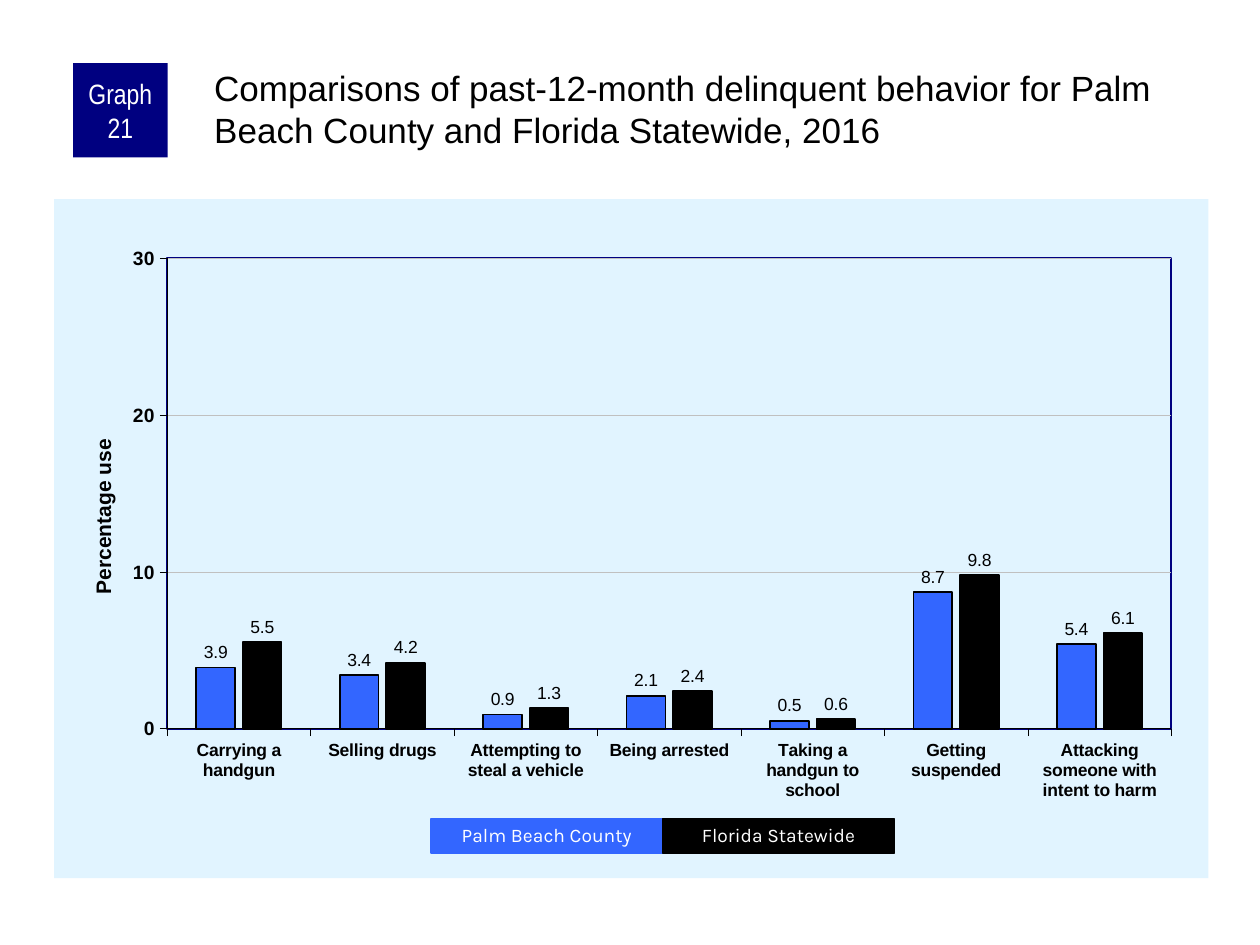
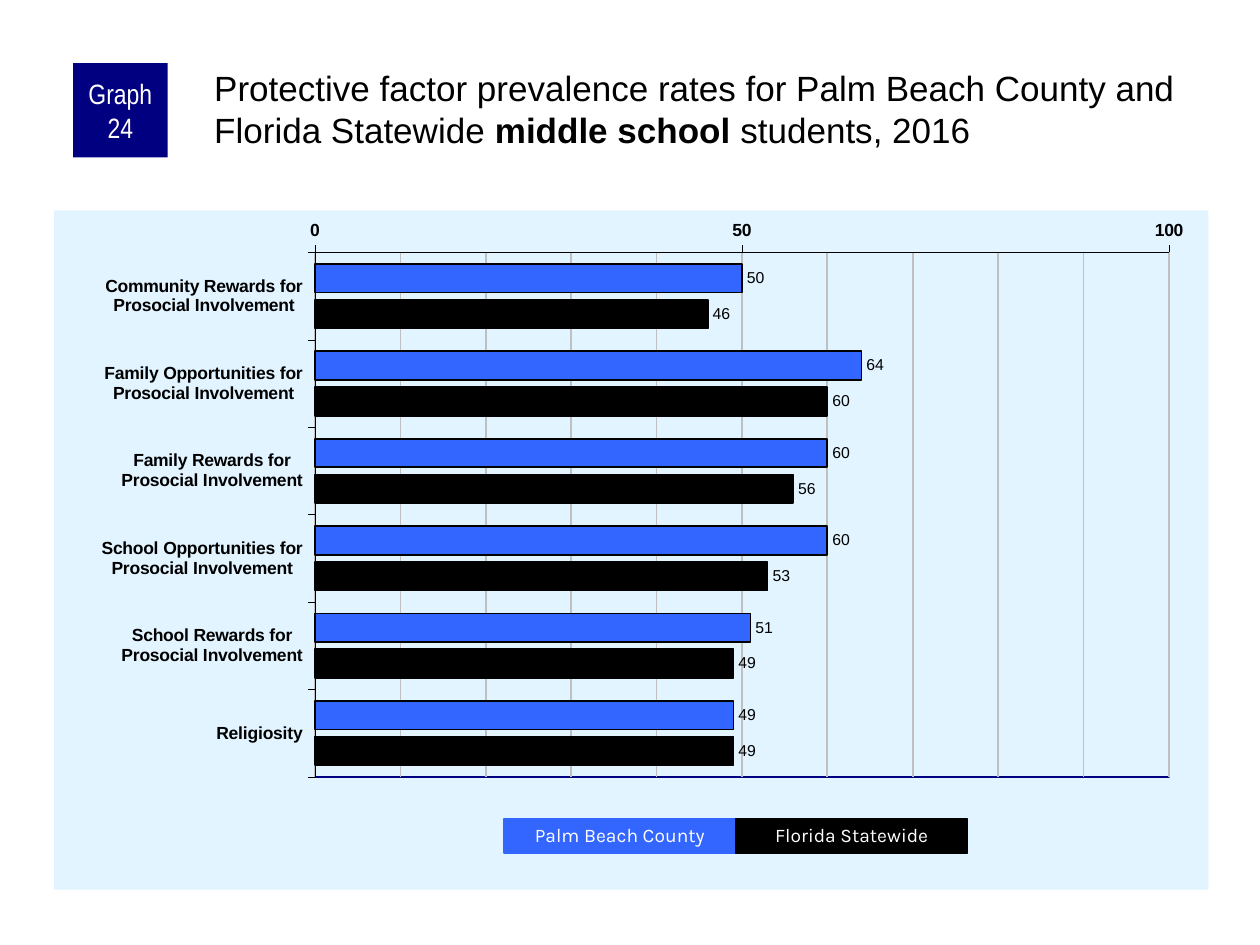
from dataclasses import dataclass

from pptx import Presentation
from pptx.chart.data import CategoryChartData
from pptx.dml.color import RGBColor
from pptx.enum.chart import XL_AXIS_CROSSES, XL_CHART_TYPE, XL_LABEL_POSITION, XL_TICK_MARK
from pptx.enum.shapes import MSO_SHAPE
from pptx.enum.text import MSO_ANCHOR, MSO_AUTO_SIZE, PP_ALIGN
from pptx.oxml import parse_xml
from pptx.oxml.ns import nsdecls, qn
from pptx.util import Inches, Pt

COLUMNS, BARS = XL_CHART_TYPE.COLUMN_CLUSTERED, XL_CHART_TYPE.BAR_CLUSTERED
OUTSIDE, NO_TICK = XL_TICK_MARK.OUTSIDE, XL_TICK_MARK.NONE
OUTSIDE_END = XL_LABEL_POSITION.OUTSIDE_END
MAXIMUM = XL_AXIS_CROSSES.MAXIMUM
RECTANGLE = MSO_SHAPE.RECTANGLE
LEFT, CENTER = PP_ALIGN.LEFT, PP_ALIGN.CENTER
TOP, MIDDLE = MSO_ANCHOR.TOP, MSO_ANCHOR.MIDDLE
NO_AUTOSIZE = MSO_AUTO_SIZE.NONE
TITLE_ONLY = 5


@dataclass(frozen=True)
class Theme:
    navy: str = "000080"
    blue: str = "3366FF"
    black: str = "000000"
    white: str = "FFFFFF"
    pale: str = "E1F4FF"
    grid: str = "C0C0C0"
    body_font: str = "Arial"
    badge_font: str = "Arial Narrow"
    legend_font: str = "Karla"
    title_size: float = 20
    badge_size: float = 16
    axis_title_size: float = 12
    legend_size: float = 11
    category_size: float = 10


THEME = Theme()
REGIONS = [("Palm Beach County", THEME.blue), ("Florida Statewide", THEME.black)]
LEGEND_WIDTH = 1.84

GRAPHS = [
    {
        "badge": "Graph 21",
        "title": [("Comparisons of past-12-month delinquent behavior for Palm "
                   "Beach County and Florida Statewide, 2016", False)],
        "kind": COLUMNS, "top": 1.58, "plot": (0.098, 0.087, 0.87, 0.693),
        "gap": 150, "overlap": -20, "maximum": 30, "major": 10, "grid_width": 0.25,
        "value_size": 11, "label_size": 10, "label_format": "0.0", "legend_left": 3.42,
        "categories": ["Carrying a handgun", "Selling drugs", "Attempting to steal a vehicle",
                       "Being arrested", "Taking a handgun to school", "Getting suspended",
                       "Attacking someone with intent to harm"],
        "values": [(3.9, 3.4, 0.9, 2.1, 0.5, 8.7, 5.4), (5.5, 4.2, 1.3, 2.4, 0.6, 9.8, 6.1)],
    },
    {
        "badge": "Graph 24",
        "title": [("Protective factor prevalence rates for Palm Beach County and "
                   "Florida Statewide ", False),
                  ("middle school ", True), ("students, 2016", False)],
        "kind": BARS, "top": 1.67, "plot": (0.226, 0.062, 0.74, 0.772),
        "gap": 80, "overlap": -25, "maximum": 100, "major": 50, "grid_width": 1,
        "value_size": 10, "label_size": 9, "label_format": "0", "legend_left": 4,
        "categories": [f"{factor} for\nProsocial Involvement" for factor in (
            "Community Rewards", "Family Opportunities", "Family Rewards",
            "School Opportunities", "School Rewards")] + ["Religiosity"],
        "values": [(50, 64, 60, 60, 51, 49), (46, 60, 56, 53, 49, 49)],
    },
]


def add_block(slide, area, text, fill, font_name, size):
    """Add a filled rectangle with centred white text."""
    block = slide.shapes.add_shape(RECTANGLE, *map(Inches, area))
    block.shadow.inherit = False
    block.fill.solid()
    block.fill.fore_color.rgb = RGBColor.from_string(fill)
    block.line.fill.background()
    frame = block.text_frame
    frame.word_wrap = True
    frame.vertical_anchor = MIDDLE
    para = frame.paragraphs[0]
    para.text = text
    para.alignment = CENTER
    para.font.name, para.font.size = font_name, Pt(size)
    para.font.color.rgb = RGBColor.from_string(THEME.white)
    return block


def set_layout(parent, index, modes, **position):
    """Give a chart part a manual layout, as fractions of the chart."""
    for old in parent.findall(qn("c:layout")):
        parent.remove(old)
    settings = {**modes, "xMode": "edge", "yMode": "edge", **position}
    items = "".join(f'<c:{name} val="{value}"/>' for name, value in settings.items())
    parent.insert(index, parse_xml(
        f'<c:layout {nsdecls("c")}><c:manualLayout>{items}</c:manualLayout></c:layout>'))


deck = Presentation()
deck.slide_width, deck.slide_height = Inches(10), Inches(7.5)

for graph in GRAPHS:
    slide = deck.slides.add_slide(deck.slide_layouts[TITLE_ONLY])

    # Title and badge
    title = slide.shapes.title
    title.left, title.top, title.width, title.height = map(Inches, (1.67, 0.5, 7.92, 0.83))
    frame = title.text_frame
    frame.auto_size = NO_AUTOSIZE
    frame.word_wrap = True
    frame.vertical_anchor = TOP
    frame.margin_left = frame.margin_top = Inches(0.03)
    frame.margin_right = frame.margin_bottom = 0
    para = frame.paragraphs[0]
    para.alignment = LEFT
    para.font.name, para.font.size = THEME.body_font, Pt(THEME.title_size)
    para.font.color.rgb = RGBColor.from_string(THEME.black)
    for text, bold in graph["title"]:
        span = para.add_run()
        span.text = text
        span.font.bold = bold

    badge = add_block(slide, (0.58, 0.5, 0.75, 0.75), graph["badge"], THEME.navy,
                      THEME.badge_font, THEME.badge_size)
    frame = badge.text_frame
    frame.margin_left = frame.margin_right = Inches(0.05)
    frame.margin_top = frame.margin_bottom = 0

    # Chart
    data = CategoryChartData()
    data.categories = graph["categories"]
    for (region, _), values in zip(REGIONS, graph["values"]):
        data.add_series(region, values)
    chart = slide.shapes.add_chart(
        graph["kind"], *map(Inches, (0.43, graph["top"], 9.16, 5.39)), data).chart
    chart.has_legend = False
    chart.has_title = False
    chart.font.name, chart.font.size = THEME.body_font, Pt(THEME.category_size)
    chart.font.color.rgb = RGBColor.from_string(THEME.black)

    plot = chart.plots[0]
    plot.gap_width, plot.overlap = graph["gap"], graph["overlap"]
    plot.vary_by_categories = False
    plot.has_data_labels = True
    labels = plot.data_labels
    labels.show_value = True
    labels.position = OUTSIDE_END
    labels.number_format, labels.number_format_is_linked = graph["label_format"], False
    labels.font.name, labels.font.size = THEME.body_font, Pt(graph["label_size"])
    labels.font.color.rgb = RGBColor.from_string(THEME.black)
    for series, (_, color) in zip(plot.series, REGIONS):
        series.invert_if_negative = False
        series.format.fill.solid()
        series.format.fill.fore_color.rgb = RGBColor.from_string(color)
        series.format.line.color.rgb = RGBColor.from_string(THEME.black)
        series.format.line.width = Pt(1)

    category_axis, value_axis = chart.category_axis, chart.value_axis
    for axis, size in ((category_axis, THEME.category_size), (value_axis, graph["value_size"])):
        axis.major_tick_mark, axis.minor_tick_mark = OUTSIDE, NO_TICK
        axis.format.line.color.rgb = RGBColor.from_string(THEME.black)
        axis.format.line.width = Pt(0.25)
        font = axis.tick_labels.font
        font.name, font.size, font.bold = THEME.body_font, Pt(size), True
        font.color.rgb = RGBColor.from_string(THEME.black)
    value_axis.minimum_scale, value_axis.maximum_scale = 0, graph["maximum"]
    value_axis.major_unit = graph["major"]
    value_axis.has_major_gridlines = True

    if graph["kind"] == BARS:
        category_axis.reverse_order = True
        category_axis.crosses = MAXIMUM
        value_axis.minor_unit = 10
        value_axis.has_minor_gridlines = True
    else:
        axis_title = value_axis.axis_title
        para = axis_title.text_frame.paragraphs[0]
        para.text = "Percentage use"
        para.font.name, para.font.size = THEME.body_font, Pt(THEME.axis_title_size)
        para.font.bold = True
        para.font.color.rgb = RGBColor.from_string(THEME.black)
        title_xml = axis_title._element
        for body in title_xml.iter(qn("a:bodyPr")):
            body.set("rot", "-5400000")
            body.set("vert", "horz")
        set_layout(title_xml, 1, {}, x=0.028, y=0.348)
    for gridlines in value_axis._element.iter(qn("c:majorGridlines"), qn("c:minorGridlines")):
        gridlines.append(parse_xml(
            f'<c:spPr {nsdecls("c", "a")}><a:ln w="{Pt(graph["grid_width"])}"><a:solidFill>'
            f'<a:srgbClr val="{THEME.grid}"/></a:solidFill></a:ln></c:spPr>'))

    # Plot position, frame and chart background
    plot_area = chart._chartSpace.chart.plotArea
    set_layout(plot_area, 0, {"layoutTarget": "inner"}, **dict(zip("xywh", graph["plot"])))
    plot_area.append(parse_xml(
        f'<c:spPr {nsdecls("c", "a")}><a:noFill/><a:ln w="{Pt(1)}"><a:solidFill>'
        f'<a:srgbClr val="{THEME.navy}"/></a:solidFill></a:ln></c:spPr>'))
    chart._chartSpace.chart.addnext(parse_xml(
        f'<c:spPr {nsdecls("c", "a")}><a:solidFill><a:srgbClr val="{THEME.pale}"/>'
        f'</a:solidFill><a:ln><a:noFill/></a:ln></c:spPr>'))

    # Legend
    for position, (region, color) in enumerate(REGIONS):
        left = graph["legend_left"] + position * LEGEND_WIDTH
        key = add_block(slide, (left, 6.5, LEGEND_WIDTH, 0.27), region, color,
                        THEME.legend_font, THEME.legend_size)
        key.line.color.rgb = RGBColor.from_string(color)
        key.line.width = Pt(0.75)
        key.text_frame.paragraphs[0].line_spacing = 0.9

deck.save("out.pptx")
